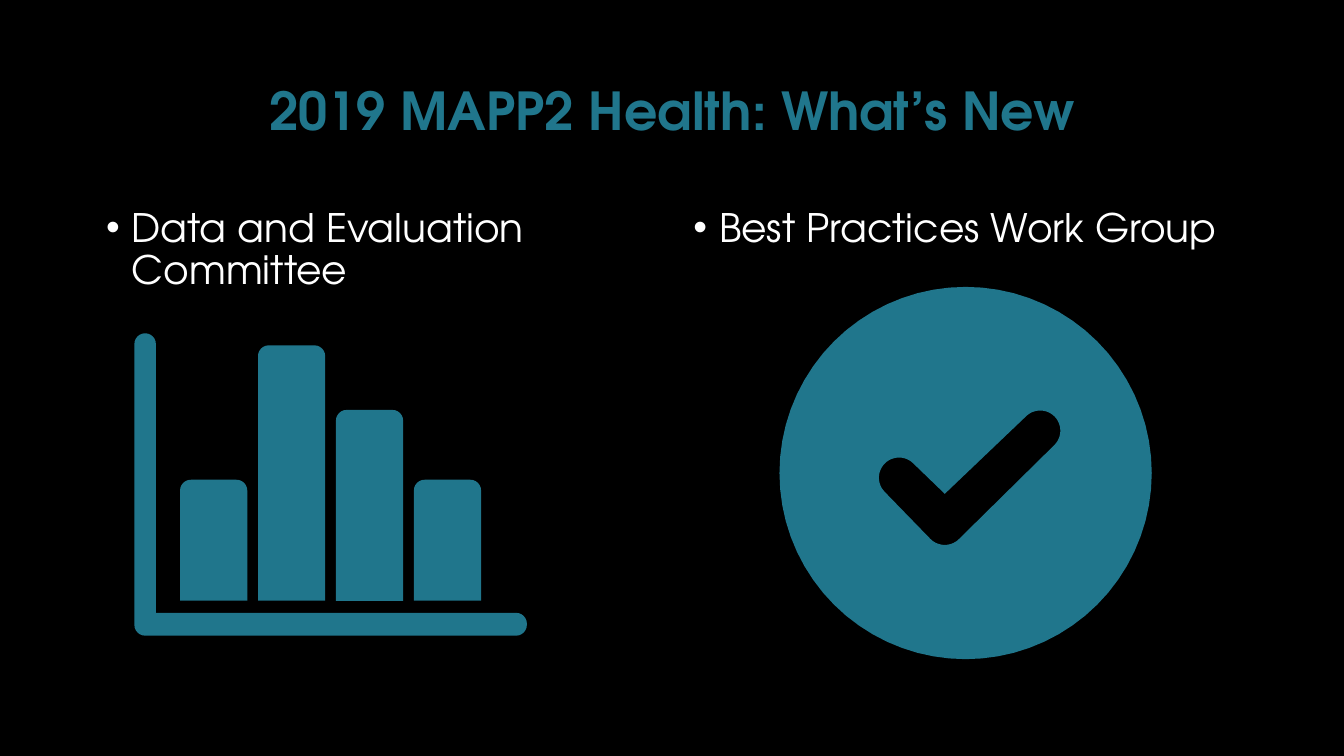
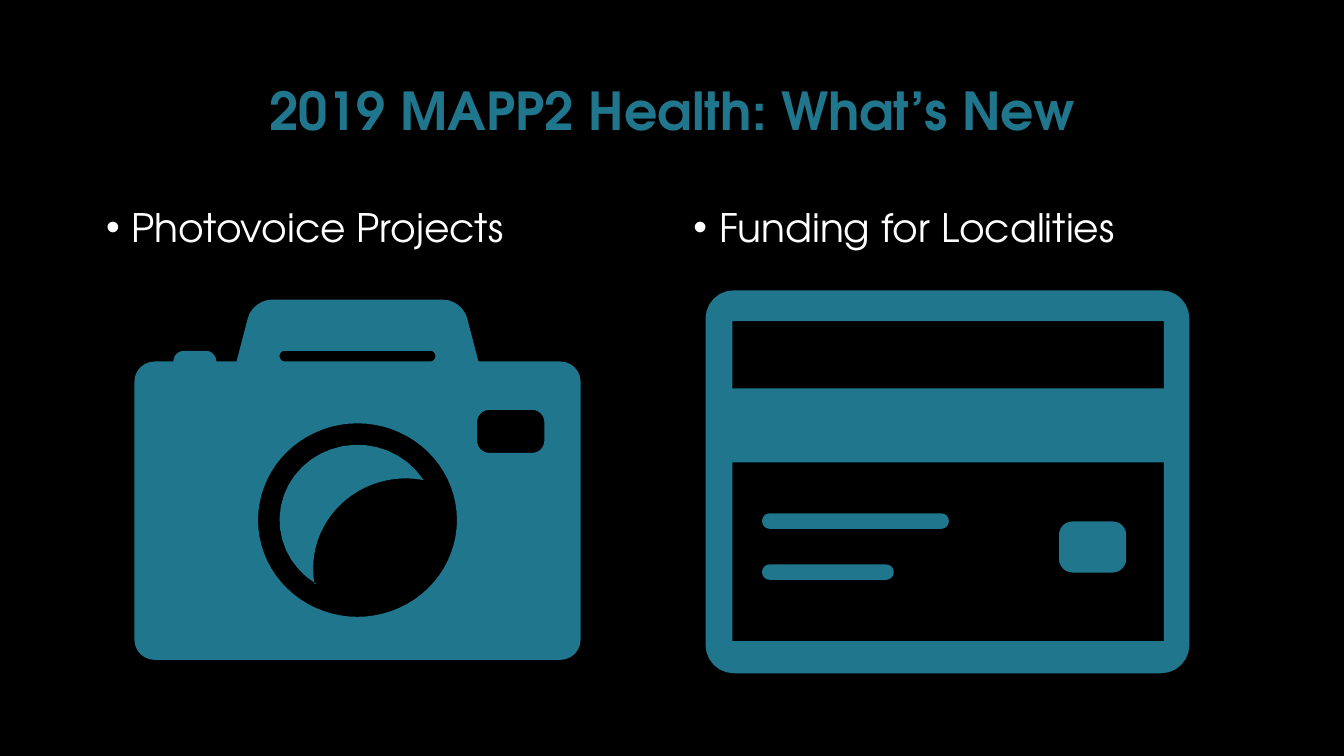
import math

from pptx import Presentation
from pptx import util as u
from pptx.dml.color import RGBColor
from pptx.enum import text

COLORS = {"background": "000000", "accent": "20768C", "body": "FFFFFF"}
FONT = "TeX Gyre Adventor"
TITLE = "2019 MAPP2 Health: What’s New"

SLIDE_WIDTH = u.Inches(10)
SLIDE_HEIGHT = SLIDE_WIDTH * 9 // 16
COLUMNS = 1000
CELL = SLIDE_WIDTH / COLUMNS
SUBCELLS = 100

TITLE_BOX = (69, 30, 862, 109)
BODY_BOXES = [(69, 150, 425, 357), (506, 150, 425, 357)]


def cells(count):
    return u.Emu(round(count * CELL))


def color(name):
    return RGBColor.from_string(COLORS[name])


def arc(center, radii, start, end, steps=24):
    angles = [math.radians(start + (end - start) * step / steps) for step in range(steps + 1)]
    return [(center[0] + radii[0] * math.cos(angle), center[1] + radii[1] * math.sin(angle))
            for angle in angles]


def ellipse(center, radii):
    return arc(center, radii, 0, 360, 72)


def rounded(corners, steps=6):
    points = []
    for index, (x, y, radius) in enumerate(corners):
        if not radius:
            points.append((x, y))
            continue
        neighbours = [corners[index - 1], corners[(index + 1) % len(corners)]]
        (back_x, back_y), (next_x, next_y) = [
            ((other_x - x) / math.hypot(other_x - x, other_y - y),
             (other_y - y) / math.hypot(other_x - x, other_y - y))
            for other_x, other_y, _ in neighbours]
        for step in range(steps + 1):
            angle = math.pi / 2 * step / steps
            back, ahead = radius * (1 - math.sin(angle)), radius * (1 - math.cos(angle))
            points.append((x + back * back_x + ahead * next_x,
                           y + back * back_y + ahead * next_y))
    return points


def rectangle(left, top, width, height, upper=0, lower=0):
    right, bottom = left + width, top + height
    return rounded([(left, top, upper), (right, top, upper),
                    (right, bottom, lower), (left, bottom, lower)])


def draw_outline(shapes, origin, *contours):
    scaled = [[(x * SUBCELLS, y * SUBCELLS) for x, y in contour] for contour in contours]
    builder = shapes.build_freeform(*scaled[0][0], scale=CELL / SUBCELLS)
    for index, contour in enumerate(scaled):
        if index:
            builder.move_to(*contour[0])
        builder.add_line_segments(contour[1:], close=True)
    shape = builder.convert_to_shape(cells(origin[0]), cells(origin[1]))
    shape.shadow.inherit = False
    shape.fill.solid()
    shape.fill.fore_color.rgb = color("accent")
    shape.line.fill.background()


def draw_bar_chart(slide, origin):
    shapes = slide.shapes.add_group_shape().shapes
    axes = [(0, 0, 8), (16, 0, 8), (16, 208, 0), (292, 208, 8), (292, 225, 8), (0, 225, 8)]
    draw_outline(shapes, origin, rounded(axes))
    baseline, first, pitch, width = 199, 34, 58, 50
    for index, height in enumerate([90, 190, 142, 90]):
        bar = rectangle(first + index * pitch, baseline - height, width, height, upper=8)
        draw_outline(shapes, origin, bar)


def draw_check_mark(slide, origin):
    radius, pen = 138.5, (15, 15)
    check = (arc((89, 142), pen, 135, 315) + [(123, 154)]
             + arc((194, 107), pen, 225, 405) + arc((123, 177), pen, 45, 135))
    draw_outline(slide.shapes, origin, ellipse((radius, radius), (radius, radius)), check)


def draw_camera(slide, origin):
    shapes = slide.shapes.add_group_shape().shapes
    lens = (166, 164)
    glare = arc(lens, (58, 56), -33, -238) + arc((202, 200), (69, 67), 170, 281)
    draw_outline(shapes, origin, glare)
    body = [(0, 46, 15), (29, 46, 0), (29, 38, 8), (61, 38, 8), (61, 46, 0), (76, 46, 0),
            (88, 0, 14), (244, 0, 14), (256, 46, 0), (332, 46, 15), (332, 268, 15), (0, 268, 15)]
    slot = rectangle(108, 38, 116, 8, 4, 4)
    flash = rectangle(255, 82, 50, 32, 9, 9)
    draw_outline(shapes, origin, rounded(body), slot, flash, ellipse(lens, (74, 72)))


def draw_bank_card(slide, origin):
    shapes = slide.shapes.add_group_shape().shapes
    draw_outline(shapes, origin, rectangle(0, 0, 360, 285, 21, 21),
                 rectangle(20, 23, 321, 50), rectangle(20, 128, 321, 133))
    for top, width in [(166, 139), (204, 98)]:
        draw_outline(shapes, origin, rectangle(42, top, width, 11.5, 5.75, 5.75))
    draw_outline(shapes, origin, rectangle(263, 172, 50, 38, 10, 10))


def fill_placeholder(placeholder, box, words, size, color_name, bold=False):
    placeholder.left, placeholder.top, placeholder.width, placeholder.height = map(cells, box)
    frame = placeholder.text_frame
    frame.text = words
    frame.word_wrap = True
    frame.auto_size = text.MSO_AUTO_SIZE.NONE
    paragraph = frame.paragraphs[0]
    paragraph.line_spacing = 0.9
    font = paragraph.font
    font.name, font.size, font.bold = FONT, u.Pt(size), bold
    font.color.rgb = color(color_name)
    return paragraph


def add_title(slide):
    title = slide.shapes.title
    paragraph = fill_placeholder(title, TITLE_BOX, TITLE, 28, "accent", bold=True)
    paragraph.alignment = text.PP_ALIGN.CENTER
    title.text_frame.vertical_anchor = text.MSO_ANCHOR.MIDDLE


def add_bullet(placeholder, box, words):
    paragraph = fill_placeholder(placeholder, box, words, 21, "body")
    paragraph.space_before = u.Pt(7.5)
    properties = paragraph._p.get_or_add_pPr()
    properties.set("marL", str(cells(19)))
    properties.set("indent", str(-cells(19)))


def add_topic_slide(presentation, topics):
    slide = presentation.slides.add_slide(presentation.slide_layouts[3])
    slide.background.fill.solid()
    slide.background.fill.fore_color.rgb = color("background")
    add_title(slide)
    for index, (words, draw_icon, origin) in enumerate(topics):
        add_bullet(slide.placeholders[index + 1], BODY_BOXES[index], words)
        draw_icon(slide, origin)


def main():
    presentation = Presentation()
    presentation.slide_width, presentation.slide_height = SLIDE_WIDTH, SLIDE_HEIGHT
    add_topic_slide(presentation, [
        ("Data and Evaluation Committee", draw_bar_chart, (100, 248)),
        ("Best Practices Work Group", draw_check_mark, (580, 213.5)),
    ])
    add_topic_slide(presentation, [
        ("Photovoice Projects", draw_camera, (100, 223)),
        ("Funding for Localities", draw_bank_card, (525, 216)),
    ])
    presentation.save("out.pptx")


if __name__ == "__main__":
    main()
